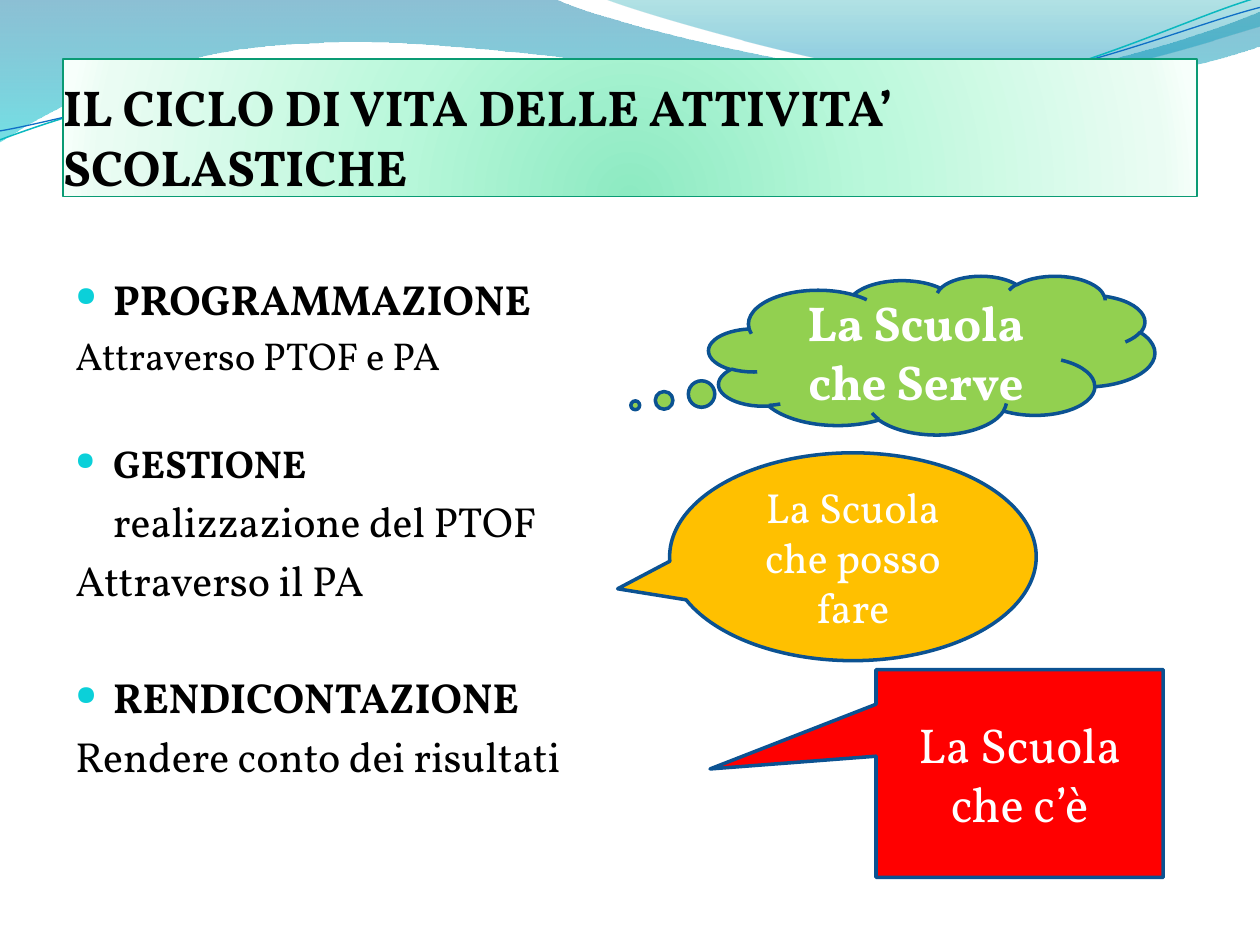
from pptx import Presentation
from pptx.dml.color import RGBColor
from pptx.enum.shapes import MSO_SHAPE
from pptx.enum.text import MSO_ANCHOR, PP_ALIGN
from pptx.oxml import parse_xml
from pptx.oxml.ns import nsdecls, qn
from pptx.util import Cm, Pt

RECT = MSO_SHAPE.RECTANGLE
CLOUD = MSO_SHAPE.CLOUD_CALLOUT
OVAL_CALLOUT = MSO_SHAPE.OVAL_CALLOUT
RECT_CALLOUT = MSO_SHAPE.RECTANGULAR_CALLOUT
MIDDLE, BOTTOM = MSO_ANCHOR.MIDDLE, MSO_ANCHOR.BOTTOM
LEFT, CENTER = PP_ALIGN.LEFT, PP_ALIGN.CENTER

FONT = "Vollkorn"
HANG = Cm(0.76)
RIPPLE_ANGLE = 357.3
COLORS = {
    "text": "000000", "white": "FFFFFF", "bullet": "0BD0D9",
    "green": "92D050", "amber": "FFC000", "red": "FF0000",
    "outline": "0B5292", "title_line": "0A9B74",
    "teal_line": "0AB8BF", "blue_line": "0F6FC6",
    "wave_blue": "0074A1", "wave_cyan": "00C6CF",
    "wave_teal": "00A1A9", "wave_sky": "008BBF",
    "mint": "8DEAC2", "mint_light": "BAF8DB",
    "mint_pale": "EAFCF3", "mint_white": "F7FFFB",
}
LINEAR = '<a:lin ang="5400000" scaled="0"/>'
RADIAL = ('<a:path path="circle"><a:fillToRect l="50000" t="130000" '
          'r="50000" b="-30000"/></a:path>')

WAVES = [
    ((0, 0),
     [(11.18, -0.03), (12.09, 0.43, 16.87, 1.6, 19.25, 1.6),
      (21.66, 1.6, 24.33, 0.66, 25.4, 0.23), (25.43, 0.91),
      (24.97, 1.12, 22.1, 1.93, 18.95, 1.91),
      (15.8, 1.91, 9.7, 0.71, 6.53, 0.86),
      (3.28, 0.91, 1.17, 2.11, -0.03, 2.87)],
     [(0, "wave_blue", 45), (100, "wave_cyan", 55)]),
    ((12.17, -0.03),
     [(12.93, 0.28, 17.32, 1.57, 19.53, 1.65),
      (21.74, 1.75, 24.41, 0.81, 25.4, 0.53), (25.4, 0)],
     [(0, "wave_teal", 30), (80, "wave_sky", 45)]),
]
RIPPLES = [
    ((-0.05, 2.22),
     [(1.19, 1.82, 4.02, 1.04, 7.05, 1.05),
      (10.05, 1.07, 15.02, 2.37, 18.08, 2.29),
      (21.13, 2.2, 23.86, 0.91, 25.41, 0.55)], "teal_line", 0.85),
    ((-0.04, 2.04),
     [(1.16, 1.9, 4.17, 1.15, 7.2, 1.16),
      (10.25, 1.18, 15.13, 2.25, 18.19, 2.16),
      (21.22, 2.1, 23.93, 1.06, 25.45, 0.75)], "blue_line", 0.75),
]
TITLE_STOPS = [(0, "mint", 100), (43, "mint_light", 100),
               (93, "mint_pale", 100), (100, "mint_white", 100)]
PHASES = [
    ("PROGRAMMAZIONE", 24, True, -HANG, 4.8),
    ("Attraverso PTOF e PA", 22.2, False, -HANG, 4.6),
    ("GESTIONE", 22.2, True, -HANG, 35.2),
    ("realizzazione del PTOF", 24, False, 0, 5.1),
    ("Attraverso il PA", 24, False, -HANG, 4.9),
    ("RENDICONTAZIONE", 24, True, -HANG, 38.2),
    ("Rendere conto dei risultati", 24, False, -HANG, 4.9),
]
CALLOUTS = [
    (CLOUD, (14.29, 5.56, 8.99, 3.2), (-0.665, 0.316),
     "green", "La Scuola che Serve", 28, True),
    (OVAL_CALLOUT, (13.5, 9.13, 7.39, 4.19), (-0.642, 0.154),
     "amber", "La Scuola che posso fare", 24, False),
    (RECT_CALLOUT, (17.66, 13.5, 5.79, 4.19), (-1.078, -0.022),
     "red", "La Scuola che c’è", 28, False),
]


def rgb(name):
    return RGBColor.from_string(COLORS[name])


def set_line(sp, color, width):
    sp.line.color.rgb = rgb(color)
    sp.line.width = Pt(width)


def set_gradient(sp, stops, direction):
    sp.fill.gradient()
    spPr = sp._element.spPr
    gs = "".join(
        f'<a:gs pos="{pos * 1000}"><a:srgbClr val="{COLORS[color]}">'
        f'<a:alpha val="{alpha * 1000}"/></a:srgbClr></a:gs>'
        for pos, color, alpha in stops)
    spPr.replace(spPr.find(qn("a:gradFill")), parse_xml(
        f'<a:gradFill {nsdecls("a")} rotWithShape="1">'
        f'<a:gsLst>{gs}</a:gsLst>{direction}</a:gradFill>'))


def format_text(p, size, color, bold, align):
    p.alignment = align
    for r in p.runs:
        r.font.name = FONT
        r.font.size = Pt(size)
        r.font.bold = bold
        r.font.color.rgb = rgb(color)


def add_outline(s, start, segments, close):
    points = [(Cm(seg[i]), Cm(seg[i + 1]))
              for seg in segments for i in range(0, len(seg), 2)]
    builder = s.shapes.build_freeform(Cm(start[0]), Cm(start[1]))
    builder.add_line_segments(points, close=close)
    sp = builder.convert_to_shape()
    sp.shadow.inherit = False
    lines = iter(list(sp._element.iter(qn("a:lnTo"))))
    for seg in segments:
        parts = [next(lines) for _ in range(len(seg) // 2)]
        if len(parts) == 3:
            curve = parse_xml(f'<a:cubicBezTo {nsdecls("a")}/>')
            parts[0].addprevious(curve)
            for part in parts:
                curve.append(part[0])
                part.getparent().remove(part)
    return sp


def add_wave(s, start, segments, stops):
    sp = add_outline(s, start, segments, True)
    set_gradient(sp, stops, LINEAR)
    sp.line.fill.background()


def add_ripple(s, start, segments, color, width):
    sp = add_outline(s, start, segments, False)
    sp.rotation = RIPPLE_ANGLE
    sp.fill.background()
    set_line(sp, color, width)


def add_title(s):
    sp = s.shapes.add_shape(RECT, Cm(1.27), Cm(1.19), Cm(22.86), Cm(2.78))
    sp.shadow.inherit = False
    set_gradient(sp, TITLE_STOPS, RADIAL)
    set_line(sp, "title_line", 0.75)
    tf = sp.text_frame
    tf.word_wrap = True
    tf.vertical_anchor = BOTTOM
    tf.margin_left = tf.margin_right = tf.margin_bottom = 0
    tf.text = "IL CICLO DI VITA DELLE ATTIVITA’ SCOLASTICHE"
    format_text(tf.paragraphs[0], 28.8, "text", True, LEFT)


def add_bullet(pPr):
    for xml in (f'<a:buClr {nsdecls("a")}>'
                f'<a:srgbClr val="{COLORS["bullet"]}"/></a:buClr>',
                f'<a:buSzPct {nsdecls("a")} val="65000"/>',
                f'<a:buChar {nsdecls("a")} char="●"/>'):
        pPr.append(parse_xml(xml))


def add_phases(s):
    tf = s.shapes.add_textbox(
        Cm(1.27), Cm(5.38), Cm(22.86), Cm(12.19)).text_frame
    tf.word_wrap = True
    for i, (text, size, heading, indent, before) in enumerate(PHASES):
        p = tf.add_paragraph() if i else tf.paragraphs[0]
        p.text = text
        format_text(p, size, "text", heading, LEFT)
        p.space_before = Pt(before)
        pPr = p._p.get_or_add_pPr()
        pPr.set("marL", str(HANG))
        pPr.set("indent", str(indent))
        if heading:
            add_bullet(pPr)


def add_callout(s, kind, box, tip, fill, text, size, bold):
    sp = s.shapes.add_shape(kind, *map(Cm, box))
    sp.shadow.inherit = False
    sp.adjustments[0], sp.adjustments[1] = tip
    sp.fill.solid()
    sp.fill.fore_color.rgb = rgb(fill)
    set_line(sp, "outline", 2)
    tf = sp.text_frame
    tf.word_wrap = True
    tf.vertical_anchor = MIDDLE
    tf.text = text
    format_text(tf.paragraphs[0], size, "white", bold, CENTER)


def main():
    prs = Presentation()
    prs.slide_width, prs.slide_height = Cm(25.4), Cm(19.05)
    s = prs.slides.add_slide(prs.slide_layouts[6])
    for wave in WAVES:
        add_wave(s, *wave)
    for ripple in RIPPLES:
        add_ripple(s, *ripple)
    add_title(s)
    add_phases(s)
    for callout in CALLOUTS:
        add_callout(s, *callout)
    prs.save("out.pptx")


if __name__ == "__main__":
    main()
